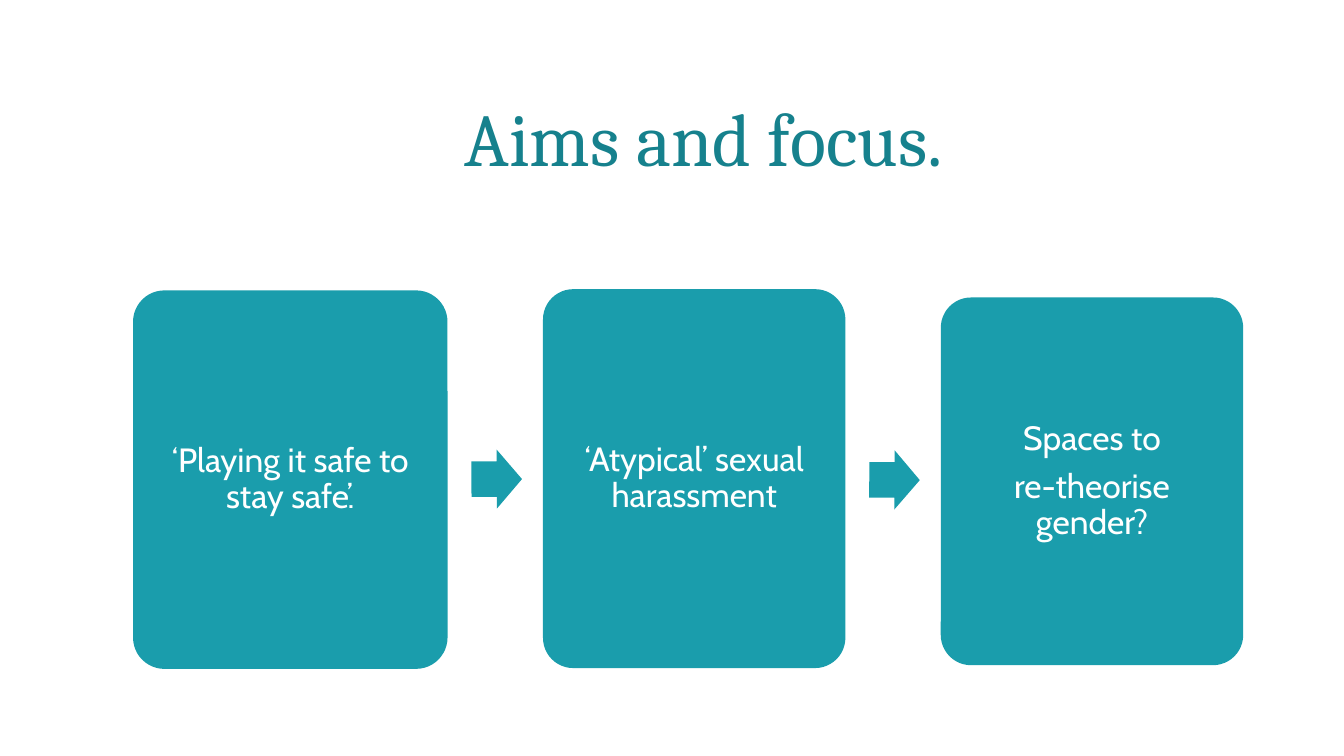
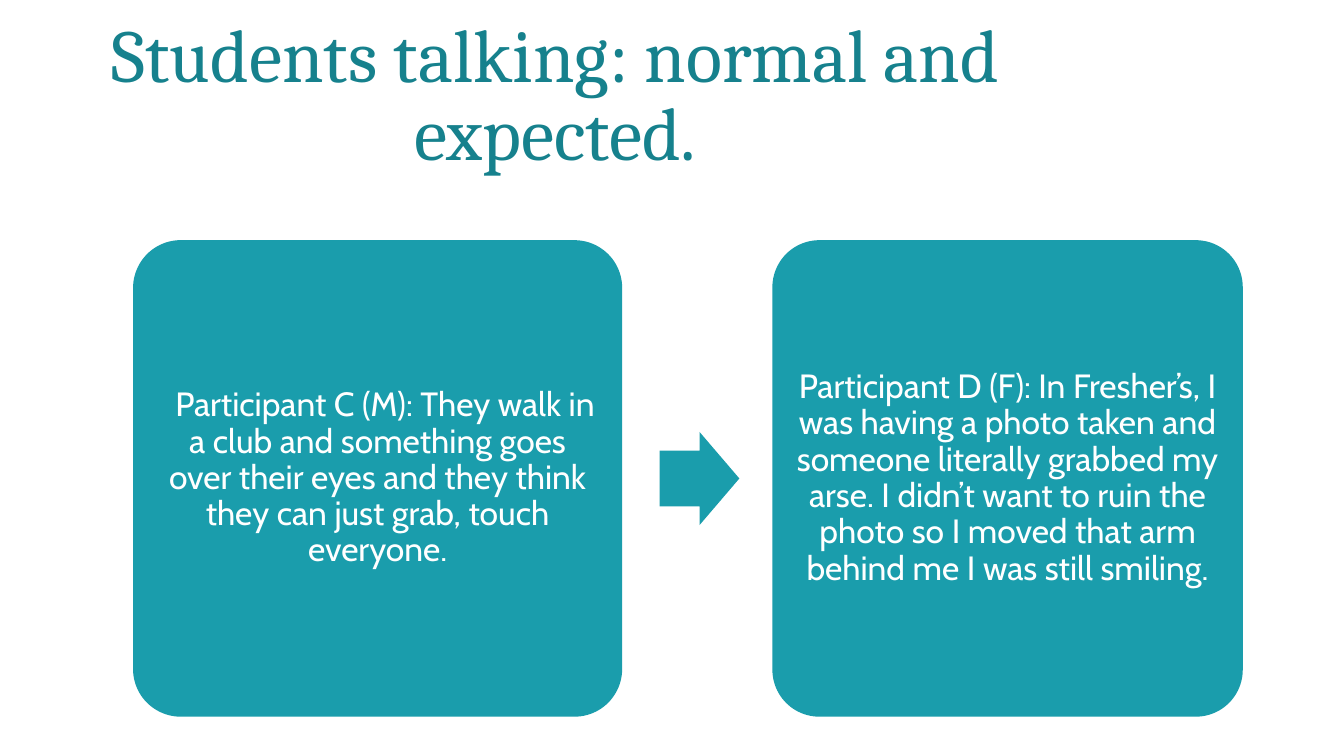
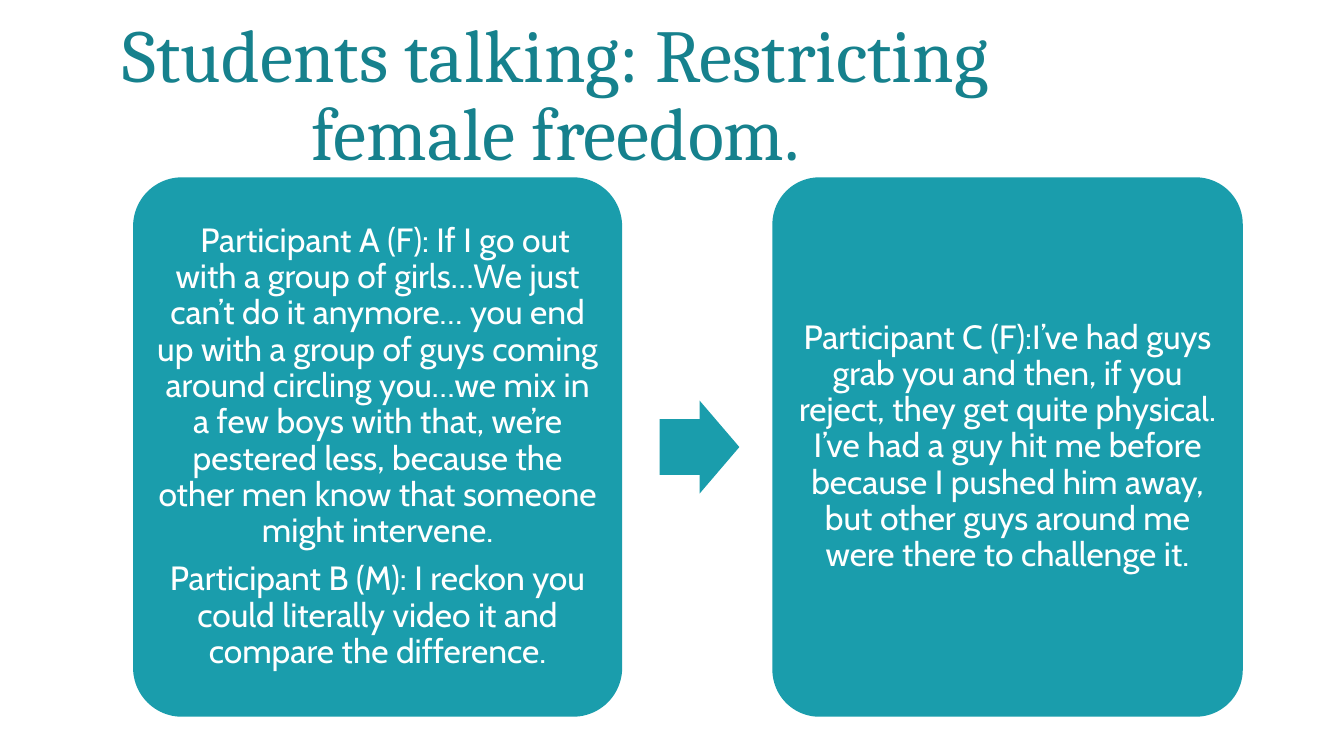
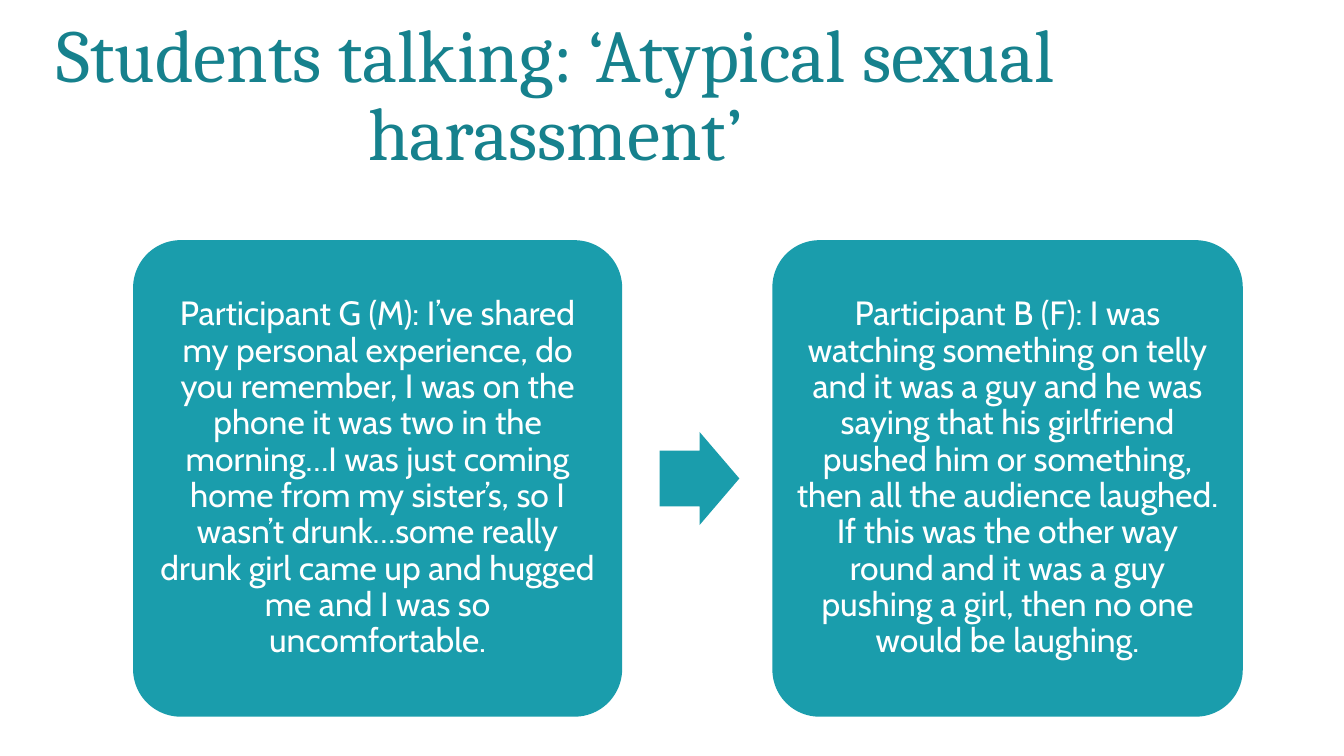
from itertools import pairwise
from math import atan2, degrees

from pptx import Presentation
from pptx.dml.color import RGBColor
from pptx.enum.shapes import MSO_SHAPE
from pptx.enum.text import MSO_ANCHOR, PP_ALIGN
from pptx.util import Pt

# Shared look
COLOURS = {"title": "16818D", "card": "1A9DAC", "card_text": "FFFFFF"}
TITLE_FONT, CARD_FONT = "Cambria", "Cabin"
CARD_INSET = 5
ARROW_START, ARROW_WIDTH = 0.25, 0.53  # shares of the gap between two cards
ARROW_RATIO = 1.17  # height to width

# Boxes in points: left, top, width, height
AIMS_TITLE = (73.5, 55.4, 607, 38)
TALK_TITLE = (8.6, 10, 578, 73)
AIMS_CARDS = [(71.3, 155.6, 168.5, 202.8), (290.9, 154.9, 162, 203), (504, 159.4, 162, 197)]
CARD_BOTTOM = 384


def talk_cards(top):
    height = CARD_BOTTOM - top
    return [(71.3, top, 262, height), (413.8, top, 252, height)]


# Content: each card is a list of paragraphs; opening_indent shifts its first line
SLIDES = [
    {
        "title": "Aims and focus.",
        "title_box": AIMS_TITLE,
        "card_boxes": AIMS_CARDS,
        "cards": [
            ["‘Playing it safe to stay safe’."],
            ["‘Atypical’ sexual harassment"],
            ["Spaces to", "re-theorise gender?"],
        ],
    },
    {
        "title": "Students talking: normal and expected.",
        "title_box": TALK_TITLE,
        "card_boxes": talk_cards(128.7),
        "opening_indent": 8,
        "cards": [
            ["Participant C (M): They walk in a club and something goes over their eyes "
             "and they think they can just grab, touch everyone."],
            ["Participant D (F): In Fresher’s, I was having a photo taken and someone "
             "literally grabbed my arse. I didn’t want to ruin the photo so I moved "
             "that arm behind me I was still smiling."],
        ],
    },
    {
        "title": "Students talking: Restricting female freedom.",
        "title_box": TALK_TITLE,
        "card_boxes": talk_cards(95),
        "opening_indent": 8,
        "cards": [
            ["Participant A (F): If I go out with a group of girls…We just can’t do it "
             "anymore… you end up with a group of guys coming around circling you…we mix "
             "in a few boys with that, we’re pestered less, because the other men know "
             "that someone might intervene.",
             "Participant B (M): I reckon you could literally video it and compare the "
             "difference."],
            ["Participant C (F):I’ve had guys grab you and then, if you reject, they get "
             "quite physical. I’ve had a guy hit me before because I pushed him away, but "
             "other guys around me were there to challenge it."],
        ],
    },
    {
        "title": "Students talking: ‘Atypical sexual harassment’",
        "title_box": TALK_TITLE,
        "card_boxes": talk_cards(128.7),
        "cards": [
            ["Participant G (M): I’ve shared my personal experience, do you remember, I was "
             "on the phone it was two in the morning…I was just coming home from my "
             "sister’s, so I wasn’t drunk…some really drunk girl came up and hugged me and "
             "I was so uncomfortable."],
            ["Participant B (F): I was watching something on telly and it was a guy and he "
             "was saying that his girlfriend pushed him or something, then all the audience "
             "laughed. If this was the other way round and it was a guy pushing a girl, "
             "then no one would be laughing."],
        ],
    },
]


def points(box):
    return [Pt(length) for length in box]


def set_margins(frame, margin):
    frame.word_wrap = True
    frame.margin_left = frame.margin_right = Pt(margin)
    frame.margin_top = frame.margin_bottom = Pt(margin)


def style_paragraph(paragraph, font_name, size, colour, line_spacing):
    paragraph.alignment = PP_ALIGN.CENTER
    paragraph.line_spacing = line_spacing
    for run in paragraph.runs:
        run.font.name = font_name
        run.font.size = Pt(size)
        run.font.color.rgb = RGBColor.from_string(COLOURS[colour])


def add_title(slide, title, box):
    frame = slide.shapes.add_textbox(*points(box)).text_frame
    set_margins(frame, 0)
    frame.text = title
    style_paragraph(frame.paragraphs[0], TITLE_FONT, 40, "title", Pt(42))


def add_block(slide, preset, box):
    block = slide.shapes.add_shape(preset, *points(box))
    block.shadow.inherit = False
    block.fill.solid()
    block.fill.fore_color.rgb = RGBColor.from_string(COLOURS["card"])
    block.line.fill.background()
    return block


def add_card(slide, quotes, box, opening_indent):
    card = add_block(slide, MSO_SHAPE.ROUNDED_RECTANGLE, box)
    card.adjustments[0] = 0.1
    frame = card.text_frame
    set_margins(frame, CARD_INSET)
    frame.vertical_anchor = MSO_ANCHOR.MIDDLE
    frame.text = "\n".join(quotes)
    for paragraph in frame.paragraphs:
        style_paragraph(paragraph, CARD_FONT, 18, "card_text", 0.9)
        paragraph.space_after = Pt(6.3)
    if opening_indent:
        frame.paragraphs[0]._p.get_or_add_pPr().set("indent", str(Pt(opening_indent)))


def add_arrow(slide, before, after):
    """Place an arrow in the gap, turned along the line between card centres."""
    (x1, y1, w1, h1), (x2, y2, w2, h2) = before, after
    gap = x2 - x1 - w1
    width = gap * ARROW_WIDTH
    height = width * ARROW_RATIO
    middle1, middle2 = y1 + h1 / 2, y2 + h2 / 2
    left = x1 + w1 + gap * ARROW_START
    top = (middle1 + middle2 - height) / 2
    arrow = add_block(slide, MSO_SHAPE.RIGHT_ARROW, (left, top, width, height))
    arrow.adjustments[0] = 0.6
    arrow.adjustments[1] = 0.5
    arrow.rotation = degrees(atan2(middle2 - middle1, x2 + w2 / 2 - x1 - w1 / 2))


def main():
    deck = Presentation()
    deck.slide_width, deck.slide_height = Pt(720), Pt(405)
    for content in SLIDES:
        slide = deck.slides.add_slide(deck.slide_layouts[6])
        add_title(slide, content["title"], content["title_box"])
        boxes = content["card_boxes"]
        for number, (quotes, box) in enumerate(zip(content["cards"], boxes)):
            opening_indent = content.get("opening_indent", 0) if number == 0 else 0
            add_card(slide, quotes, box, opening_indent)
        for before, after in pairwise(boxes):
            add_arrow(slide, before, after)
    deck.save("out.pptx")


if __name__ == "__main__":
    main()
